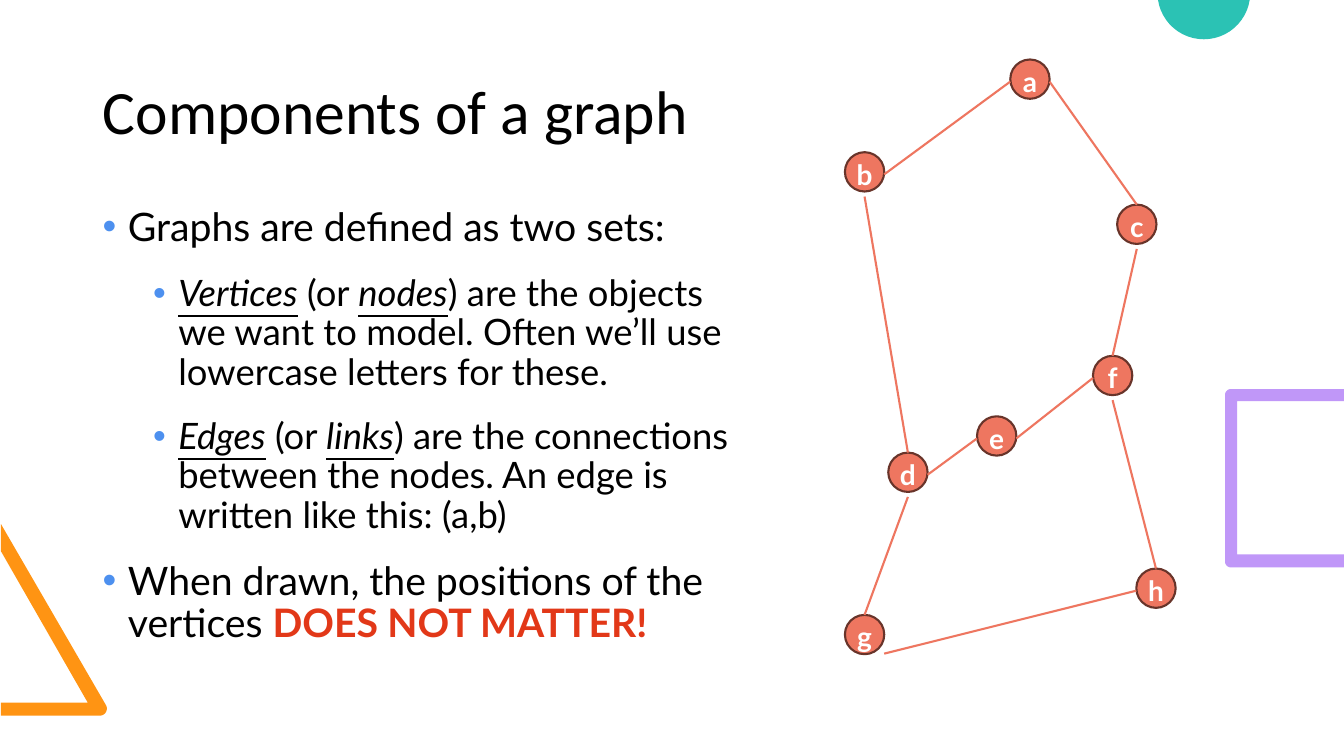
from math import cos, radians, sin

from lxml import etree
from pptx import Presentation
from pptx.dml.color import RGBColor
from pptx.enum.shapes import MSO_CONNECTOR, MSO_SHAPE
from pptx.enum.text import MSO_ANCHOR, MSO_AUTO_SIZE, PP_ALIGN
from pptx.oxml.ns import qn
from pptx.util import Inches, Pt

STRAIGHT = MSO_CONNECTOR.STRAIGHT
OVAL = MSO_SHAPE.OVAL
MIDDLE = MSO_ANCHOR.MIDDLE
NO_FIT = MSO_AUTO_SIZE.NONE
LEFT, CENTER = PP_ALIGN.LEFT, PP_ALIGN.CENTER

COLORS = {
    "orange": "FF9413", "teal": "2BC2B4", "purple": "C097F8",
    "coral": "EE7660", "brown": "68342A", "red": "E23818",
    "bullet": "4D90EF", "black": "000000", "white": "FFFFFF",
}


def rgb(name):
    return RGBColor.from_string(COLORS[name])


def arc(x, y, radius, start, end, steps=24):
    """Points along a circle, with angles in degrees clockwise from the right."""
    angles = [radians(start + (end - start) * i / steps) for i in range(steps + 1)]
    return [(x + radius * cos(a), y + radius * sin(a)) for a in angles]


deck = Presentation()
deck.slide_width, deck.slide_height = Inches(13.33), Inches(7.5)
page = deck.slides.add_slide(deck.slide_layouts[5])

# Decorations cut off by the slide edges
outlines = {
    "orange": [(0.01, 7.1), (0.01, 6.97), (0.87, 6.97), (0.01, 5.47), (0.01, 5.2),
               *arc(0.99, 7.03, 0.07, -30, 90)],
    "teal": arc(11.94, -0.07, 0.46, 8.5, 171.5),
    "purple": [(13.33, 5.63), (13.33, 5.5), (12.27, 5.5), (12.27, 3.98),
               (13.33, 3.98), (13.33, 3.86), *arc(12.21, 3.92, 0.06, 270, 180),
               *arc(12.21, 5.57, 0.06, 180, 90)],
}
for color, points in outlines.items():
    corners = [(Inches(x), Inches(y)) for x, y in points]
    builder = page.shapes.build_freeform(*corners[0])
    builder.add_line_segments(corners[1:], close=True)
    outline = builder.convert_to_shape()
    outline.shadow.inherit = False
    outline.fill.solid()
    outline.fill.fore_color.rgb = rgb(color)
    outline.line.fill.background()

# Title
title = page.shapes.title
title.left, title.top = Inches(0.92), Inches(0.33)
title.width, title.height = Inches(11.5), Inches(1.61)
frame = title.text_frame
frame.text = "Components of a graph"
frame.auto_size = NO_FIT
frame.vertical_anchor = MIDDLE
para = frame.paragraphs[0]
para.alignment = LEFT
para.line_spacing = 0.9
font = para.runs[0].font
font.name, font.size, font.color.rgb = "Calibri", Pt(44), rgb("black")

# Bulleted text: level, then spans of text and style
bullets = [
    (0, [("Graphs are defined as two sets:", "plain")]),
    (1, [("Vertices", "term"), (" (or ", "plain"), ("nodes", "term"),
         (") are the objects we want to model. Often we’ll use lowercase "
          "letters for these.", "plain")]),
    (1, [("Edges", "term"), (" (or ", "plain"), ("links", "term"),
         (") are the connections between the nodes. An edge is written "
          "like this: (a,b)", "plain")]),
    (0, [("When drawn, the positions of the vertices ", "plain"),
         ("DOES NOT MATTER!", "warning")]),
]
box = page.shapes.add_textbox(Inches(0.92), Inches(2.01), Inches(6.51), Inches(4.69))
frame = box.text_frame
frame.word_wrap = True
for index, (level, spans) in enumerate(bullets):
    para = frame.add_paragraph() if index else frame.paragraphs[0]
    para.level = level
    para.line_spacing = 0.9
    para.space_before, para.space_after = Pt(10), Pt(8)
    properties = para._p.get_or_add_pPr()
    properties.set("marL", str(Inches(0.25 + 0.5 * level)))
    properties.set("indent", str(Inches(-0.25)))
    bullet_color = etree.SubElement(properties, qn("a:buClr"))
    etree.SubElement(bullet_color, qn("a:srgbClr"), val=COLORS["bullet"])
    etree.SubElement(properties, qn("a:buFont"), typeface="Arial")
    etree.SubElement(properties, qn("a:buChar"), char="•")
    for text, style in spans:
        span = para.add_run()
        span.text = text
        font = span.font
        font.name, font.size = "Lato", Pt(28 - 2 * level)
        font.italic = font.underline = style == "term"
        font.bold = style == "warning"
        font.color.rgb = rgb("red" if style == "warning" else "black")

# Vertices: left, top and label height
SIZE = 0.39
vertices = {
    "g": (8.38, 6.1, 0.77), "b": (8.38, 1.51, 0.44), "f": (10.84, 3.53, 0.44),
    "a": (10.02, 0.59, 0.44), "h": (11.27, 5.64, 0.44), "c": (11.08, 2.03, 0.44),
    "d": (8.81, 4.49, 0.44), "e": (9.69, 4.13, 0.44),
}
for letter, (left, top, height) in vertices.items():
    group = page.shapes.add_group_shape()
    circle = group.shapes.add_shape(
        OVAL, Inches(left), Inches(top), Inches(SIZE), Inches(SIZE))
    circle.shadow.inherit = False
    circle.fill.solid()
    circle.fill.fore_color.rgb = rgb("coral")
    circle.line.color.rgb = rgb("brown")
    circle.line.width = Pt(1.5)
    label = group.shapes.add_textbox(
        Inches(left), Inches(top), Inches(SIZE), Inches(height))
    label.text_frame.word_wrap = True
    label.text_frame.text = letter
    para = label.text_frame.paragraphs[0]
    para.alignment = CENTER
    font = para.runs[0].font
    font.name, font.size, font.bold = "Lato", Pt(20), True
    font.color.rgb = rgb("white")

# Edges join the side midpoints of the vertex labels
sides = {"top": (0.5, 0), "left": (0, 0.5), "bottom": (0.5, 1), "right": (1, 0.5)}
edges = [
    ("b", "bottom", "d", "top"), ("d", "right", "e", "left"),
    ("b", "right", "a", "left"), ("a", "right", "c", "top"),
    ("c", "bottom", "f", "top"), ("f", "left", "e", "right"),
    ("d", "bottom", "g", "top"), ("g", "right", "h", "left"),
    ("h", "top", "f", "bottom"),
]
for start, start_side, end, end_side in edges:
    ends = []
    for letter, side in ((start, start_side), (end, end_side)):
        left, top, height = vertices[letter]
        across, down = sides[side]
        ends += [Inches(left + across * SIZE), Inches(top + down * height)]
    edge = page.shapes.add_connector(STRAIGHT, *ends)
    edge.line.color.rgb = rgb("coral")
    edge.line.width = Pt(1.5)
    etree.SubElement(edge._element.spPr, qn("a:effectLst"))

deck.save("out.pptx")
